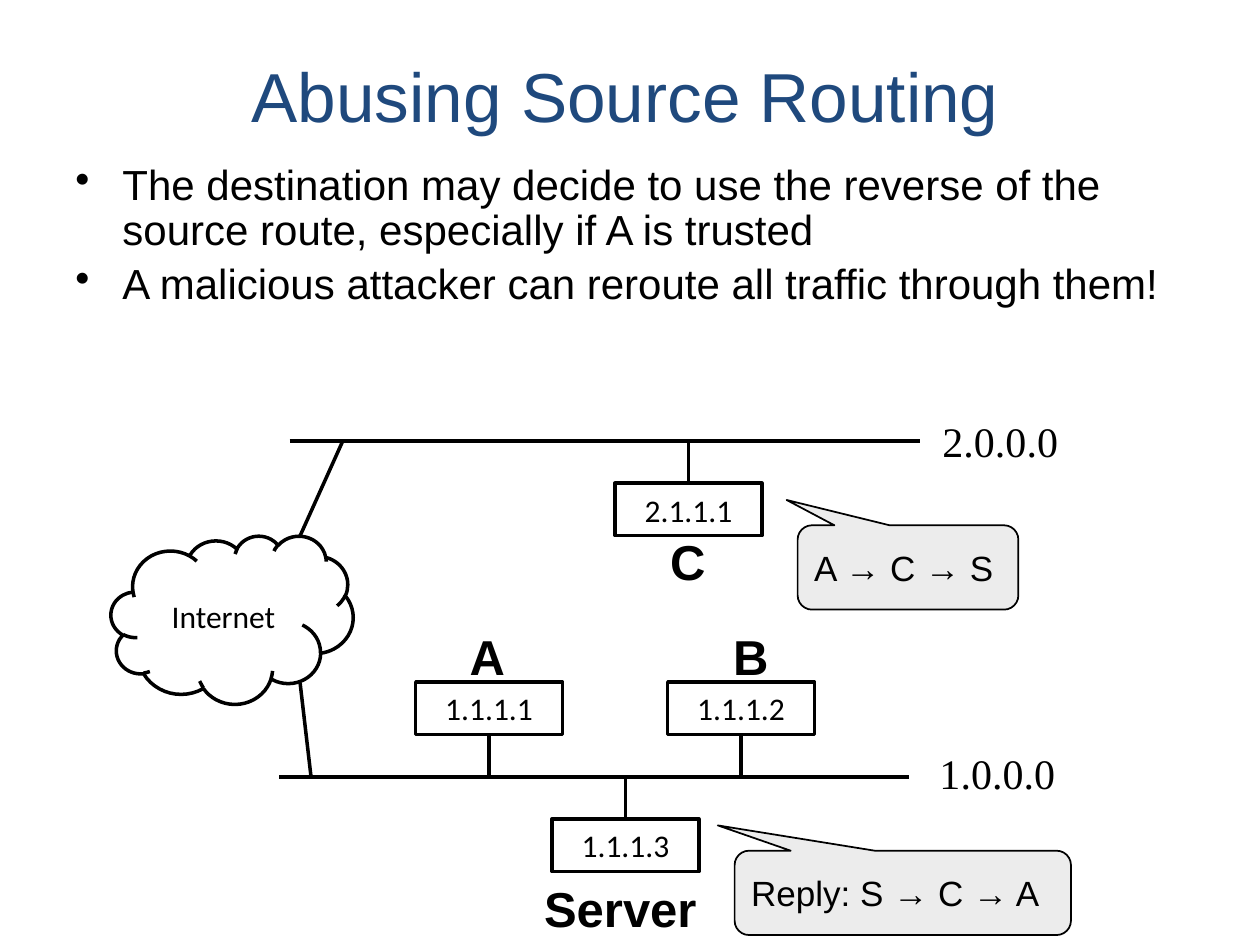
from lxml import etree
from pptx import Presentation
from pptx.dml.color import RGBColor
from pptx.enum.shapes import MSO_CONNECTOR, MSO_SHAPE
from pptx.enum.text import MSO_ANCHOR, MSO_AUTO_SIZE, PP_ALIGN
from pptx.oxml.ns import qn
from pptx.util import Cm, Pt

RECTANGLE = MSO_SHAPE.RECTANGLE
CLOUD = MSO_SHAPE.CLOUD
CALLOUT = MSO_SHAPE.ROUNDED_RECTANGULAR_CALLOUT
STRAIGHT = MSO_CONNECTOR.STRAIGHT
MIDDLE, TOP = MSO_ANCHOR.MIDDLE, MSO_ANCHOR.TOP
LEFT, CENTER = PP_ALIGN.LEFT, PP_ALIGN.CENTER

HOST_WIDTH, HOST_HEIGHT, DROP = 2.96, 1.06, 0.85
NETWORK_LENGTH = 12.7


def color(value):
    return RGBColor.from_string(value)


class NetworkSlide:
    black, navy, gray = "000000", "1F497D", "ECECEC"
    sans, node_font, serif = "Arial", "Calibri", "Times New Roman"

    def __init__(self, slide):
        self.shapes = slide.shapes

    def style(self, paragraph, size, font, ink=black, bold=False, align=LEFT):
        paragraph.alignment = align
        paragraph.font.size = Pt(size)
        paragraph.font.name = font
        paragraph.font.bold = bold
        paragraph.font.color.rgb = color(ink)

    def text_box(self, left, top, width, height, anchor=TOP):
        box = self.shapes.add_textbox(Cm(left), Cm(top), Cm(width), Cm(height))
        box.text_frame.word_wrap = True
        box.text_frame.vertical_anchor = anchor
        return box.text_frame

    def title(self, text, *area):
        paragraph = self.text_box(*area, anchor=MIDDLE).paragraphs[0]
        paragraph.text = text
        self.style(paragraph, 39.6, self.sans, self.navy, align=CENTER)

    def bullets(self, items, *area):
        frame = self.text_box(*area)
        frame.text = "\n".join(items)
        for paragraph in frame.paragraphs:
            self.style(paragraph, 24, self.sans)
            paragraph.line_spacing = 0.9
            paragraph.space_before = Pt(4.8)
            properties = paragraph._p.get_or_add_pPr()
            properties.set("marL", str(Cm(0.95)))
            properties.set("indent", str(Cm(-0.95)))
            bullet = etree.Element(qn("a:buChar"), char="•")
            properties.find(qn("a:spcBef")).addnext(bullet)

    def label(self, text, left, top, width, height, size, font, bold=False):
        frame = self.text_box(left, top, width, height)
        frame.word_wrap = False
        frame.auto_size = MSO_AUTO_SIZE.SHAPE_TO_FIT_TEXT
        frame.text = text
        self.style(frame.paragraphs[0], size, font, bold=bold)

    def name(self, text, left, top, width=1.22):
        self.label(text, left, top, width, 1.45, 28, self.sans, bold=True)

    def line(self, x1, y1, x2, y2):
        connector = self.shapes.add_connector(STRAIGHT, Cm(x1), Cm(y1), Cm(x2), Cm(y2))
        connector.line.color.rgb = color(self.black)
        connector.line.width = Pt(2)
        etree.SubElement(connector._element.spPr, qn("a:effectLst"))

    def node(self, kind, text, left, top, width, height, size=18,
             font=node_font, fill=None, weight=2, align=CENTER):
        shape = self.shapes.add_shape(kind, Cm(left), Cm(top), Cm(width), Cm(height))
        shape.shadow.inherit = False
        if fill:
            shape.fill.solid()
            shape.fill.fore_color.rgb = color(fill)
        else:
            shape.fill.background()
        shape.line.color.rgb = color(self.black)
        shape.line.width = Pt(weight)
        frame = shape.text_frame
        frame.word_wrap = False
        frame.vertical_anchor = MIDDLE
        frame.text = text
        self.style(frame.paragraphs[0], size, font, align=align)
        return shape

    def callout(self, text, left, top, width):
        shape = self.node(CALLOUT, text, left, top, width, 1.7, 20, self.sans,
                          self.gray, 1, LEFT)
        for index, value in enumerate((-0.55, -0.8, 0.17)):
            shape.adjustments[index] = value

    def network(self, address, left, y, label_left, label_top):
        self.line(left, y, left + NETWORK_LENGTH, y)
        self.label(address, label_left, label_top, 2.84, 1.27, 24, self.serif)

    def host(self, address, left, network_y, above):
        """Box joined to its network by a short vertical line."""
        edge = network_y - DROP if above else network_y + DROP
        top = edge - HOST_HEIGHT if above else edge
        middle = left + HOST_WIDTH / 2
        self.line(middle, network_y, middle, edge)
        self.node(RECTANGLE, address, left, top, HOST_WIDTH, HOST_HEIGHT)


def main():
    presentation = Presentation()
    presentation.slide_width, presentation.slide_height = Cm(25.4), Cm(19.05)
    slide = NetworkSlide(presentation.slides.add_slide(presentation.slide_layouts[6]))

    # Heading and points
    slide.title("Abusing Source Routing", 0.64, 1.07, 23.93, 1.7)
    slide.bullets([
        "The destination may decide to use the reverse of the source route, "
        "especially if A is trusted",
        "A malicious attacker can reroute all traffic through them!",
    ], 1.27, 3.18, 22.86, 5.51)

    # Networks and the cloud between them
    upper, lower = 8.89, 15.66
    slide.network("2.0.0.0", 5.84, upper, 18.75, 8.26)
    slide.network("1.0.0.0", 5.63, lower, 18.69, 14.94)
    slide.node(CLOUD, "Internet", 2.24, 10.8, 4.88, 3.39)
    slide.line(6.05, 10.8, 6.91, upper)
    slide.line(6.27, lower, 6.05, 13.77)

    # Hosts
    for address, left, network_y, above in (
        ("2.1.1.1", 12.4, upper, False),
        ("1.1.1.1", 8.38, lower, True),
        ("1.1.1.2", 13.46, lower, True),
        ("1.1.1.3", 11.13, lower, False),
    ):
        slide.host(address, left, network_y, above)

    # Host names
    slide.name("A", 9.22, 12.5)
    slide.name("B", 14.53, 12.5)
    slide.name("C", 13.26, 10.59)
    slide.name("Server", 10.72, 17.58, 3.58)

    # Routes
    slide.callout("A → C → S", 16.08, 10.59, 4.45)
    slide.callout("Reply: S → C → A", 14.81, 17.15, 6.78)

    presentation.save("out.pptx")


if __name__ == "__main__":
    main()
